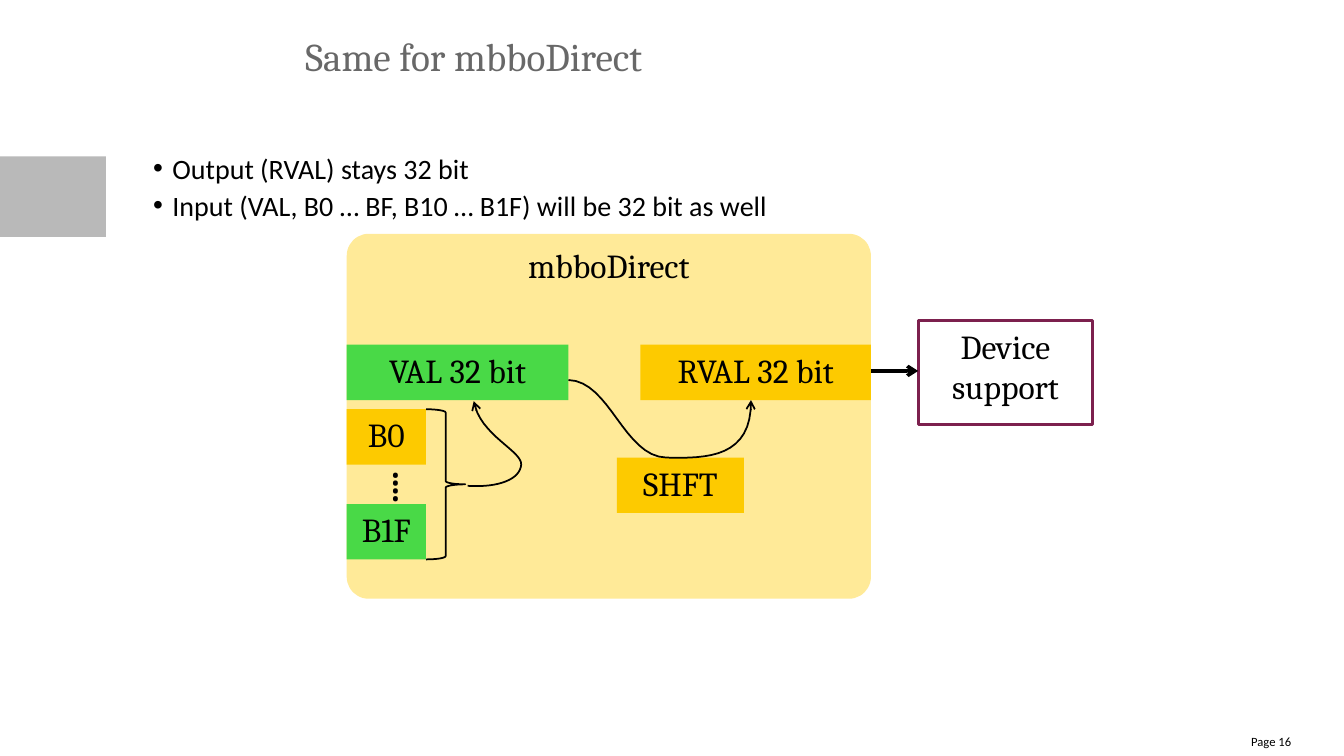
import pptx
import pptx.util
import pptx.dml.color
import pptx.enum.shapes
import pptx.enum.text
import pptx.oxml.ns
import lxml.etree

RGB = pptx.dml.color.RGBColor
BLACK = RGB(0, 0, 0)
WHITE = RGB(0xFF, 0xFF, 0xFF)
GREY = RGB(0xB9, 0xB9, 0xB9)
SLATE = RGB(0x68, 0x68, 0x68)
CREAM = RGB(0xFF, 0xEA, 0x98)
GREEN = RGB(0x49, 0xD9, 0x47)
GOLD = RGB(0xFD, 0xCA, 0x00)
PLUM = RGB(0x7C, 0x20, 0x4E)

SHAPE = pptx.enum.shapes.MSO_SHAPE
ALIGN = pptx.enum.text.PP_ALIGN
PT = pptx.util.Pt
INCH = pptx.util.Inches


def add_xml(parent, tag, **attrs):
    node = lxml.etree.SubElement(parent, pptx.oxml.ns.qn(tag))
    for key, value in attrs.items():
        node.set(key, value)
    return node


class Board:
    """Style and slide; lengths are hundredths of the slide's width and height."""

    serif, sans = "Cambria", "Calibri"

    def __init__(self, deck):
        self.col = deck.slide_width / 100
        self.row = deck.slide_height / 100
        self.slide = deck.slides.add_slide(deck.slide_layouts[1])
        self.shapes = self.slide.shapes

    def spot(self, x, y):
        return round(x * self.col), round(y * self.row)

    def area(self, x, y, w, h):
        return *self.spot(x, y), *self.spot(w, h)

    def letter(self, shape, text, size, font, color=BLACK, align=ALIGN.CENTER,
               inset=None, space=None, wrap=True, bullet=False):
        frame = shape.text_frame
        frame.text = text
        frame.word_wrap = wrap
        frame.auto_size = pptx.enum.text.MSO_AUTO_SIZE.NONE
        frame.vertical_anchor = pptx.enum.text.MSO_ANCHOR.TOP
        if inset is not None:
            frame.margin_left = frame.margin_right = inset
            frame.margin_top = frame.margin_bottom = inset
        for para in frame.paragraphs:
            if bullet:
                self.bullet(para)
            para.alignment = align
            para.space_before = PT(0)
            if space:
                para.line_spacing = space
            for run in para.runs:
                run.font.size = PT(size)
                run.font.name = font
                run.font.color.rgb = color

    def bullet(self, para):
        props = para._p.get_or_add_pPr()
        props.set("marL", str(INCH(0.19)))
        props.set("indent", str(-INCH(0.19)))
        add_xml(add_xml(props, "a:buClr"), "a:srgbClr", val=str(BLACK))
        add_xml(props, "a:buFont", typeface="Arial")
        add_xml(props, "a:buChar", char="•")

    def holder(self, index, area, text, size, font, **style):
        shape = self.slide.placeholders[index]
        shape.left, shape.top, shape.width, shape.height = self.area(*area)
        self.letter(shape, text, size, font, align=ALIGN.LEFT, inset=0, **style)

    def label(self, area, text, size, font, **style):
        shape = self.shapes.add_textbox(*self.area(*area))
        self.letter(shape, text, size, font, inset=0, **style)

    def stroke(self, shape, color, width, arrow=None):
        shape.line.color.rgb = color
        shape.line.width = PT(width)
        if arrow:
            add_xml(shape.line._get_or_add_ln(), arrow, type="arrow")

    def block(self, area, fill, text="", kind=SHAPE.RECTANGLE, edge=None):
        shape = self.shapes.add_shape(kind, *self.area(*area))
        shape.shadow.inherit = False
        shape.fill.solid()
        shape.fill.fore_color.rgb = fill
        if edge:
            self.stroke(shape, edge, 2)
        else:
            shape.line.fill.background()
        if text:
            self.letter(shape, text, 24, self.serif)
        return shape

    def arrow(self, start, end):
        kind = pptx.enum.shapes.MSO_CONNECTOR.STRAIGHT
        line = self.shapes.add_connector(kind, *self.spot(*start), *self.spot(*end))
        self.stroke(line, BLACK, 2.5, "a:tailEnd")
        add_xml(line._element.spPr, "a:effectLst")

    def brace(self, area):
        shape = self.shapes.add_shape(SHAPE.RIGHT_BRACE, *self.area(*area))
        shape.shadow.inherit = False
        shape.fill.background()
        self.stroke(shape, BLACK, 1.25)

    def curve(self, knots, steps=16):
        """Chain of cubic curves, with the arrowhead at the first knot."""
        points = []
        for i in range(0, len(knots) - 1, 3):
            for n in range(1, steps + 1):
                t = n / steps
                u = 1 - t
                parts = (u**3, 3 * u * u * t, 3 * u * t * t, t**3)
                points.append(self.spot(*(
                    sum(p * knot[axis] for p, knot in zip(parts, knots[i:i + 4]))
                    for axis in (0, 1))))
        pen = self.shapes.build_freeform(*self.spot(*knots[0]))
        pen.add_line_segments(points, close=False)
        shape = pen.convert_to_shape()
        shape.shadow.inherit = False
        shape.fill.background()
        self.stroke(shape, BLACK, 1.25, "a:headEnd")


def main():
    deck = pptx.Presentation()
    deck.slide_width, deck.slide_height = INCH(13.33), INCH(7.5)
    board = Board(deck)

    # Frame of the page
    board.block((0, 20.67, 7.88, 10.67), GREY)
    board.holder(0, (22.72, 4.27, 73.35, 7.47), "Same for mbboDirect",
                 28, board.serif, color=SLATE)
    board.holder(1, (11.4, 19.6, 84.67, 68.27),
                 "Output (RVAL) stays 32 bit\n"
                 "Input (VAL, B0 … BF, B10 … B1F) will be 32 bit as well",
                 20, board.sans, space=1.1, bullet=True)
    board.label((89.77, 97.07, 6.3, 2.93), "Page 16", 9, board.sans,
                align=ALIGN.RIGHT)

    # Record with its fields
    left, tall = 25.8, 7.33
    record = board.block((left, 30.93, 39, 48.27), CREAM, "mbboDirect",
                         SHAPE.ROUNDED_RECTANGLE)
    record.adjustments[0] = 0.06
    for text, x, y, wide, fill in (
            ("VAL 32 bit", left, 45.6, 16.5, GREEN),
            ("RVAL 32 bit", 47.65, 45.6, 17.15, GOLD),
            ("B0", left, 54.13, 5.9, GOLD),
            ("B1F", left, 66.67, 5.9, GREEN),
            ("SHFT", 45.9, 60.53, 9.45, GOLD)):
        board.block((x, y, wide, tall), fill, text)
    board.label((28.72, 60.53, 1.42, tall), "⁞", 28, board.serif,
                space=1.1, wrap=False)

    # Device support
    board.block((68.32, 42.4, 12.98, 13.73), WHITE, "Device\vsupport", edge=PLUM)
    board.arrow((64.8, 49.07), (68.32, 49.07))

    # Flow of the bits
    board.brace((31.7, 54.13, 2.92, 19.87))
    board.curve([(35.25, 53.07), (35.7, 57.6), (38.85, 59.6), (38.78, 61.47),
                 (38.7, 63.33), (37.2, 64.53), (34.8, 64.27)])
    board.curve([(55.88, 52.93), (55.95, 60.53), (52.65, 60.67), (49.58, 60.53),
                 (46.42, 60.4), (45.38, 50.4), (42.3, 50.27)])

    deck.save("out.pptx")


if __name__ == "__main__":
    main()
